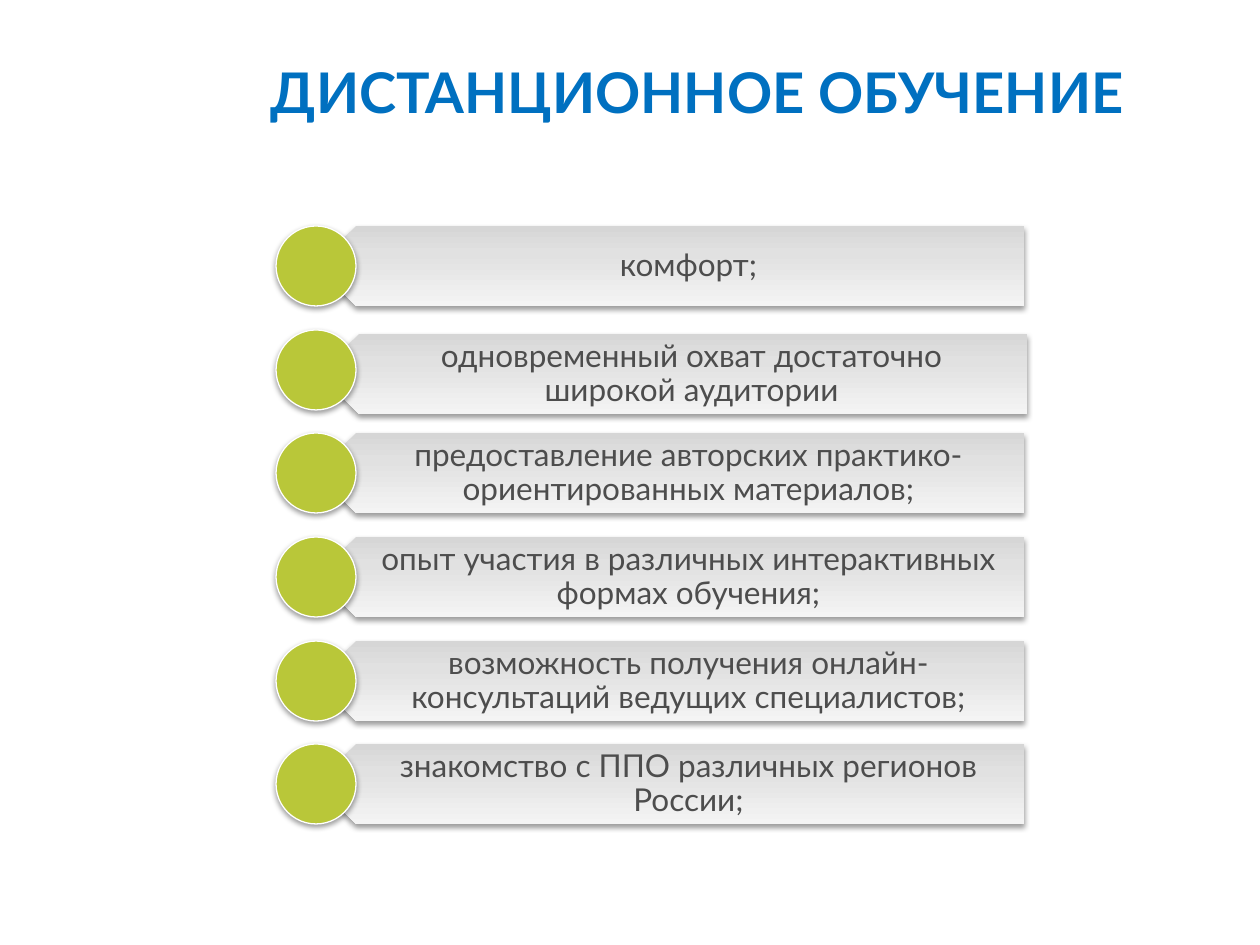
from dataclasses import dataclass

import lxml.etree
import pptx
import pptx.dml.color
import pptx.enum.shapes
import pptx.enum.text
import pptx.oxml
import pptx.oxml.ns
import pptx.util

EMU_PER_PX = 914400 / 126
SHAPES = pptx.enum.shapes.MSO_SHAPE


@dataclass(frozen=True)
class Theme:
    font: str = "Lato"
    title_color: str = "0070C0"
    text_color: str = "4D4D4D"
    circle_color: str = "B9C739"
    circle_line: str = "FFFFFF"
    bar_stops: tuple = ((0, "D6D6D6"), (35, "E1E1E1"), (100, "F4F4F4"))
    title_size: int = 32
    text_size: int = 18


def px(length):
    return pptx.util.Emu(round(length * EMU_PER_PX))


def rgb(value):
    return pptx.dml.color.RGBColor.from_string(value)


class SlideBuilder:
    def __init__(self, slide, theme):
        self.slide = slide
        self.theme = theme

    def text(self, box, content, size, color, bold=False, insets=(0, 0, 0, 0), spacing=1.0):
        shape = self.slide.shapes.add_textbox(*map(px, box))
        frame = shape.text_frame
        frame.word_wrap = True
        frame.vertical_anchor = pptx.enum.text.MSO_ANCHOR.MIDDLE
        frame.margin_left, frame.margin_top, frame.margin_right, frame.margin_bottom = map(px, insets)
        paragraph = frame.paragraphs[0]
        paragraph.alignment = pptx.enum.text.PP_ALIGN.CENTER
        paragraph.line_spacing = spacing
        run = paragraph.add_run()
        run.text = content
        run.font.name = self.theme.font
        run.font.size = pptx.util.Pt(size)
        run.font.bold = bold
        run.font.color.rgb = rgb(color)

    def add_shadow(self, shape):
        """Put a soft shadow just below the shape."""
        shape.shadow.inherit = False
        effects = shape._element.spPr.find(pptx.oxml.ns.qn("a:effectLst"))
        effects.append(pptx.oxml.parse_xml(
            f'<a:outerShdw {pptx.oxml.ns.nsdecls("a")} blurRad="40000" dist="20000" '
            'dir="5400000" rotWithShape="0"><a:srgbClr val="000000">'
            '<a:alpha val="38000"/></a:srgbClr></a:outerShdw>'))

    def bar(self, box):
        shape = self.slide.shapes.add_shape(SHAPES.PENTAGON, *map(px, box))
        shape.rotation = 180
        shape.line.fill.background()
        shape.fill.gradient()
        shape.fill.gradient_angle = 90
        stops = shape._element.spPr.find(".//" + pptx.oxml.ns.qn("a:gsLst"))
        for stop in list(stops):
            stops.remove(stop)
        for position, color in self.theme.bar_stops:
            stop = lxml.etree.SubElement(stops, pptx.oxml.ns.qn("a:gs"), pos=str(position * 1000))
            lxml.etree.SubElement(stop, pptx.oxml.ns.qn("a:srgbClr"), val=color)
        self.add_shadow(shape)

    def circle(self, box):
        shape = self.slide.shapes.add_shape(SHAPES.OVAL, *map(px, box))
        shape.fill.solid()
        shape.fill.fore_color.rgb = rgb(self.theme.circle_color)
        shape.line.color.rgb = rgb(self.theme.circle_line)
        shape.line.width = pptx.util.Pt(0.75)
        self.add_shadow(shape)

    def title(self, box, content):
        self.text(box, content, self.theme.title_size, self.theme.title_color, bold=True)

    def benefit(self, top, content, shift=(0, 0)):
        """Draw a bar, its text and its circle; shift moves the bar and text."""
        height = 80
        right, down = shift
        self.bar((316 + right, top + down, 708, height))
        self.text((336 + right, top + down, 688, height), content, self.theme.text_size,
                  self.theme.text_color, insets=(35, 9, 18, 9), spacing=0.9)
        self.circle((276, top, height, height))


BENEFITS = [
    "комфорт;",
    "одновременный охват достаточно широкой аудитории",
    "предоставление авторских практико-ориентированных материалов;",
    "опыт участия в различных интерактивных формах обучения;",
    "возможность получения онлайн-консультаций ведущих специалистов;",
    "знакомство с ППО различных регионов России;",
]
FIRST_TOP = 226
PITCH = 103.7
SHIFTS = {1: (3, 4)}


def main():
    presentation = pptx.Presentation()
    presentation.slide_width = px(1260)
    presentation.slide_height = px(945)
    slide = presentation.slides.add_slide(presentation.slide_layouts[6])
    builder = SlideBuilder(slide, Theme())
    builder.title((198, 60, 999, 63), "ДИСТАНЦИОННОЕ ОБУЧЕНИЕ")
    for index, content in enumerate(BENEFITS):
        top = round(FIRST_TOP + index * PITCH)
        builder.benefit(top, content, SHIFTS.get(index, (0, 0)))
    presentation.save("out.pptx")


if __name__ == "__main__":
    main()
